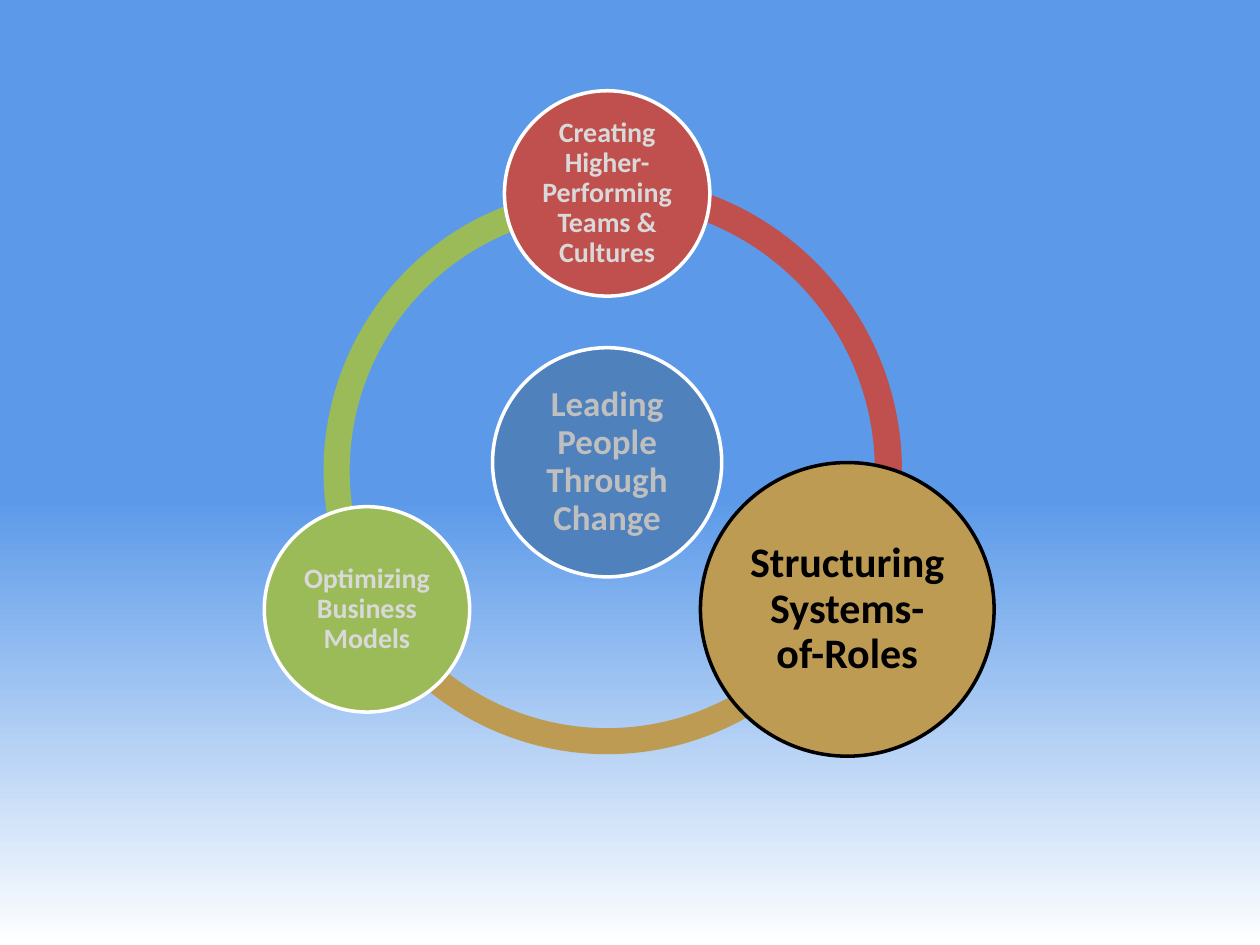
import math

import pptx
import pptx.util
import pptx.dml.color
import pptx.enum.shapes
import pptx.enum.text

Cm, Pt = pptx.util.Cm, pptx.util.Pt
SHAPE = pptx.enum.shapes.MSO_SHAPE

# Content: angles run clockwise from the right, lengths in cm
CORE = dict(text="Leading People Through Change", diameter=4.62,
            fill="blue", line="white", color="grey", size="core")
THEMES = [
    dict(text="Creating Higher-Performing Teams & Cultures", angle=270,
         diameter=4.14, ring=11.89,
         fill="red", line="white", color="pale", size="node"),
    dict(text="Structuring Systems-of-Roles", angle=30,
         diameter=5.92, ring=11.43,
         fill="gold", line="black", color="black", size="focus"),
    dict(text="Optimizing Business Models", angle=150,
         diameter=4.14, ring=11.43,
         fill="green", line="white", color="pale", size="node"),
]

THEME = dict(
    font="Calibri",
    colors=dict(sky="5C9AE9", white="FFFFFF", black="000000", grey="BFBFBF",
                pale="D9D9D9", blue="4F81BD", red="C0504D", gold="BD9B53",
                green="9BBB59"),
    sizes=dict(core=20, node=16, focus=24),
)

CENTER_X, CENTER_Y = 12.24, 9.49
CORE_Y = 9.32
ORBIT = 5.59
BAND = 0.046  # ring thickness as a share of its diameter
SWEEP = 360 / len(THEMES)


def rgb(name):
    return pptx.dml.color.RGBColor.from_string(THEME["colors"][name])


def add_round(slide, kind, x, y, diameter, fill):
    """Add a filled shape centred on x, y."""
    shape = slide.shapes.add_shape(
        kind, Cm(x - diameter / 2), Cm(y - diameter / 2), Cm(diameter), Cm(diameter))
    shape.shadow.inherit = False
    shape.fill.solid()
    shape.fill.fore_color.rgb = rgb(fill)
    shape.line.fill.background()
    return shape


def write(frame, text, *, size, color, inset=0.06):
    frame.word_wrap = True
    frame.vertical_anchor = pptx.enum.text.MSO_ANCHOR.MIDDLE
    frame.margin_left = frame.margin_right = Cm(inset)
    frame.margin_top = frame.margin_bottom = Cm(inset)
    paragraph = frame.paragraphs[0]
    paragraph.alignment = pptx.enum.text.PP_ALIGN.CENTER
    paragraph.line_spacing = 0.9
    run = paragraph.add_run()
    run.text = text
    run.font.name = THEME["font"]
    run.font.size = Pt(THEME["sizes"][size])
    run.font.bold = True
    run.font.color.rgb = rgb(color)


def add_circle(slide, x, y, item):
    circle = add_round(slide, SHAPE.OVAL, x, y, item["diameter"], item["fill"])
    circle.line.color.rgb = rgb(item["line"])
    circle.line.width = Pt(2)
    write(circle.text_frame, item["text"], size=item["size"], color=item["color"])


def add_arc(slide, item):
    arc = add_round(slide, SHAPE.BLOCK_ARC, CENTER_X, CENTER_Y, item["ring"], item["fill"])
    # Angles are stored in 60000ths of a degree, adjustments in 100000ths
    arc.adjustments[0] = item["angle"] * 0.6
    arc.adjustments[1] = (item["angle"] + SWEEP) % 360 * 0.6
    arc.adjustments[2] = BAND


def main():
    deck = pptx.Presentation()
    deck.slide_width, deck.slide_height = Cm(25.4), Cm(19.05)
    slide = deck.slides.add_slide(deck.slide_layouts[6])

    # Background: blue fading to white at the bottom
    background = slide.background.fill
    background.gradient()
    background.gradient_angle = 270
    for stop, (position, color) in zip(background.gradient_stops,
                                       [(0.53, "sky"), (1, "white")]):
        stop.position = position
        stop.color.rgb = rgb(color)

    # Ring, from back to front
    for item in reversed(THEMES):
        add_arc(slide, item)

    # Core and the circles around it
    add_circle(slide, CENTER_X, CORE_Y, CORE)
    for item in THEMES:
        angle = math.radians(item["angle"])
        add_circle(slide, CENTER_X + ORBIT * math.cos(angle),
                   CENTER_Y + ORBIT * math.sin(angle), item)

    deck.save("out.pptx")


if __name__ == "__main__":
    main()
